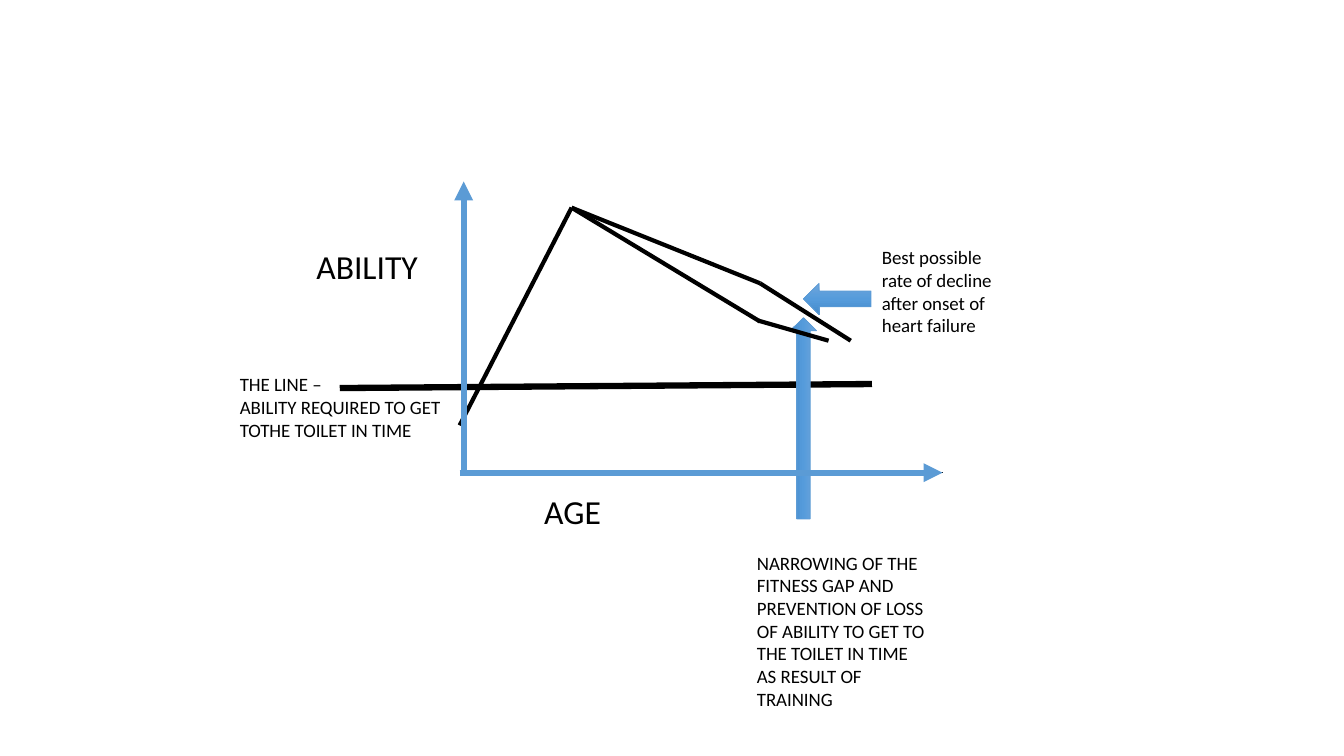
"""Build the slide charting ability against age, with the effect of training."""
from copy import deepcopy

from pptx import Presentation
from pptx.dml.color import RGBColor
from pptx.enum.shapes import MSO_CONNECTOR as CONN, MSO_SHAPE as SHAPE
from pptx.enum.text import MSO_AUTO_SIZE as AUTO
from pptx.oxml.ns import qn
from pptx.util import Inches, Pt
from lxml.etree import SubElement

BLACK = RGBColor(0x00, 0x00, 0x00)
BLUE = RGBColor(0x5B, 0x9B, 0xD5)
GRADIENT = [
    (0, RGBColor(0x71, 0xA6, 0xDB)),
    (0.5, RGBColor(0x55, 0x9B, 0xDB)),
    (1, RGBColor(0x44, 0x8A, 0xCA)),
]

prs = Presentation()
prs.slide_width, prs.slide_height = Inches(13.33), Inches(7.5)
slide = prs.slides.add_slide(prs.slide_layouts[6])


def share(*lengths):
    """Turn alternating width and height percentages into slide lengths."""
    sides = (prs.slide_width, prs.slide_height)
    return [int(sides[i % 2] * n / 100) for i, n in enumerate(lengths)]


def add_line(start, end, color, width, arrow=False):
    """Draw a straight line, with an arrowhead at its end if asked."""
    s = slide.shapes.add_connector(CONN.STRAIGHT, *share(*start, *end))
    s.line.color.rgb = color
    s.line.width = Pt(width)
    if arrow:
        SubElement(s.line._get_or_add_ln(), qn("a:tailEnd"), type="triangle")
    SubElement(s._element.spPr, qn("a:effectLst"))


origin, age_end = (34.5, 62.53), (70.13, 62.53)
peak, best_bend = (42.53, 27.47), (56.55, 37.47)

for start, end, width in [
    ((34.5, 25.87), origin, 0.75),
    (origin, age_end, 0.75),
    ((25.28, 51.33), (64.88, 50.8), 4.5),
    (peak, best_bend, 3),
    (best_bend, (63.3, 45.07), 3),
]:
    add_line(start, end, BLACK, width)

for box, rotation in [
    ((59.78, 37.47, 5.03, 4.13), 0),
    ((52.28, 53.6, 15, 3.47), 90),
]:
    s = slide.shapes.add_shape(SHAPE.LEFT_ARROW, *share(*box))
    s.rotation = rotation
    s.shadow.inherit = False
    s.line.color.rgb = BLUE
    s.line.width = Pt(0.5)
    s.fill.gradient()
    s.fill.gradient_angle = 270
    stops = s._element.spPr.find(".//" + qn("a:gsLst"))
    stops.append(deepcopy(stops[0]))
    for stop, (position, color) in zip(s.fill.gradient_stops, GRADIENT):
        stop.position = position
        stop.color.rgb = color

for start, end in [
    (peak, (56.55, 42.53)),
    ((56.4, 42.4), (61.65, 45.07)),
    (peak, (34.2, 56.27)),
]:
    add_line(start, end, BLACK, 3)

for box, size, paragraphs in [
    ((64.88, 31.87, 10.65, 13.47), 13.5,
     ["Best possible rate of decline after onset of heart failure"]),
    ((55.58, 72.27, 14.55, 22.53), 13.5,
     ["NARROWING OF THE FITNESS GAP AND PREVENTION OF LOSS OF ABILITY "
      "TO GET TO THE TOILET IN TIME", "AS RESULT OF TRAINING"]),
    ((17.1, 48.67, 17.63, 10.4), 13.5,
     ["THE LINE –", "ABILITY REQUIRED TO GET TOTHE TOILET IN TIME"]),
    ((22.8, 31.87, 9.75, 6.67), 24, ["ABILITY"]),
    ((39.75, 64.27, 6, 6.67), 24, ["AGE"]),
]:
    tf = slide.shapes.add_textbox(*share(*box)).text_frame
    tf.word_wrap = True
    tf.auto_size = AUTO.SHAPE_TO_FIT_TEXT
    for i, text in enumerate(paragraphs):
        p = tf.add_paragraph() if i else tf.paragraphs[0]
        r = p.add_run()
        r.text = text
        for name, value in {"name": "Calibri", "size": Pt(size)}.items():
            setattr(r.font, name, value)
        r.font.color.rgb = BLACK

for start, end in [(origin, (34.5, 24)), ((34.2, 62.53), age_end)]:
    add_line(start, end, BLUE, 4.5, arrow=True)

prs.save("out.pptx")
